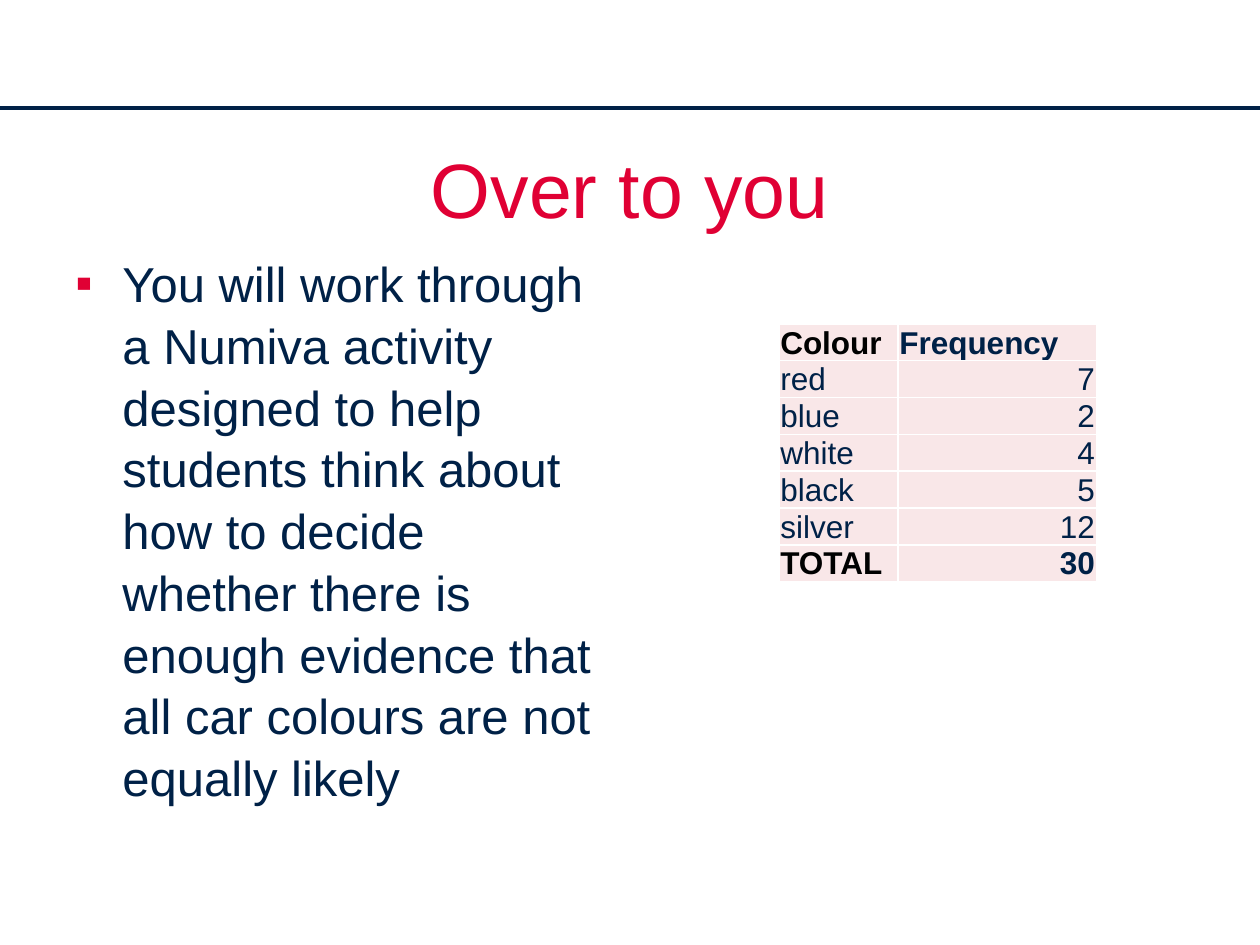
from lxml.etree import SubElement
from pptx import Presentation
from pptx.dml.color import RGBColor
from pptx.enum.shapes import MSO_CONNECTOR
from pptx.enum.text import MSO_ANCHOR, PP_ALIGN
from pptx.oxml.ns import qn
from pptx.util import Cm, Pt

NAVY = RGBColor(0x00, 0x21, 0x47)
RED = RGBColor(0xE0, 0x00, 0x34)
PINK = RGBColor(0xF9, 0xE7, 0xE8)
BLACK = RGBColor(0x00, 0x00, 0x00)
WHITE = RGBColor(0xFF, 0xFF, 0xFF)

BODY = ("You will work through a Numiva activity designed to help students think "
        "about how to decide whether there is enough evidence that all car "
        "colours are not equally likely")
ROWS = [("Colour", "Frequency"), ("red", "7"), ("blue", "2"), ("white", "4"),
        ("black", "5"), ("silver", "12"), ("TOTAL", "30")]


def add_run(p, text, size, color, bold=False):
    r = p.add_run()
    r.text = text
    r.font.name = "Arial"
    r.font.size = Pt(size)
    r.font.color.rgb = color
    r.font.bold = bold


def add_rule(s, y, width):
    line = s.shapes.add_connector(MSO_CONNECTOR.STRAIGHT, 0, y, width, y)
    line.line.color.rgb = NAVY
    line.line.width = Pt(2.25)
    SubElement(line._element.spPr, qn("a:effectLst"))


def set_title(s, text):
    sp = s.shapes.title
    sp.left, sp.top, sp.width, sp.height = Cm(1.27), Cm(2.72), Cm(22.86), Cm(2.13)
    tf = sp.text_frame
    tf.vertical_anchor = MSO_ANCHOR.MIDDLE
    p = tf.paragraphs[0]
    p.alignment = PP_ALIGN.CENTER
    add_run(p, text, 44, RED)


def add_bullet(s, text):
    sp = s.shapes.add_textbox(Cm(1.27), Cm(4.93), Cm(11.23), Cm(12.09))
    tf = sp.text_frame
    tf.word_wrap = True
    p = tf.paragraphs[0]
    pPr = p._p.get_or_add_pPr()
    pPr.set("marL", str(Cm(0.95)))
    pPr.set("indent", str(-Cm(0.95)))
    color = SubElement(pPr, qn("a:buClr"))
    SubElement(color, qn("a:srgbClr"), val=str(RED))
    SubElement(pPr, qn("a:buFont"), typeface="Arial")
    SubElement(pPr, qn("a:buChar"), char="▪")
    p.line_spacing = 1.05
    add_run(p, text, 28, NAVY)


def set_borders(cell):
    tcPr = cell._tc.get_or_add_tcPr()
    for i, side in enumerate(("a:lnL", "a:lnR", "a:lnT", "a:lnB")):
        ln = tcPr.makeelement(qn(side), {"w": str(Pt(1))})
        fill = SubElement(ln, qn("a:solidFill"))
        SubElement(fill, qn("a:srgbClr"), val=str(WHITE))
        tcPr.insert(i, ln)


def fill_cell(cell, text, color, bold, align):
    cell.fill.solid()
    cell.fill.fore_color.rgb = PINK
    set_borders(cell)
    cell.vertical_anchor = MSO_ANCHOR.BOTTOM
    cell.margin_left = cell.margin_right = cell.margin_top = Cm(0.03)
    cell.margin_bottom = 0
    p = cell.text_frame.paragraphs[0]
    p.alignment = align
    add_run(p, text, 18, color, bold)


def add_frequencies(s, rows):
    height = Cm(0.74)
    frame = s.shapes.add_table(len(rows), 2, Cm(15.7), Cm(6.53),
                               Cm(6.4), height * len(rows))
    table = frame.table
    table.columns[0].width, table.columns[1].width = Cm(2.4), Cm(4)
    for i, (colour, frequency) in enumerate(rows):
        table.rows[i].height = height
        bold = i in (0, len(rows) - 1)
        fill_cell(table.cell(i, 0), colour, BLACK if bold else NAVY, bold, PP_ALIGN.LEFT)
        fill_cell(table.cell(i, 1), frequency, NAVY, bold,
                  PP_ALIGN.RIGHT if i else PP_ALIGN.LEFT)


def main():
    prs = Presentation()
    prs.slide_width, prs.slide_height = Cm(25.4), Cm(19.05)
    s = prs.slides.add_slide(prs.slide_layouts[5])
    add_rule(s, Cm(2.18), prs.slide_width)
    add_frequencies(s, ROWS)
    add_bullet(s, BODY)
    set_title(s, "Over to you")
    prs.save("out.pptx")


if __name__ == "__main__":
    main()
